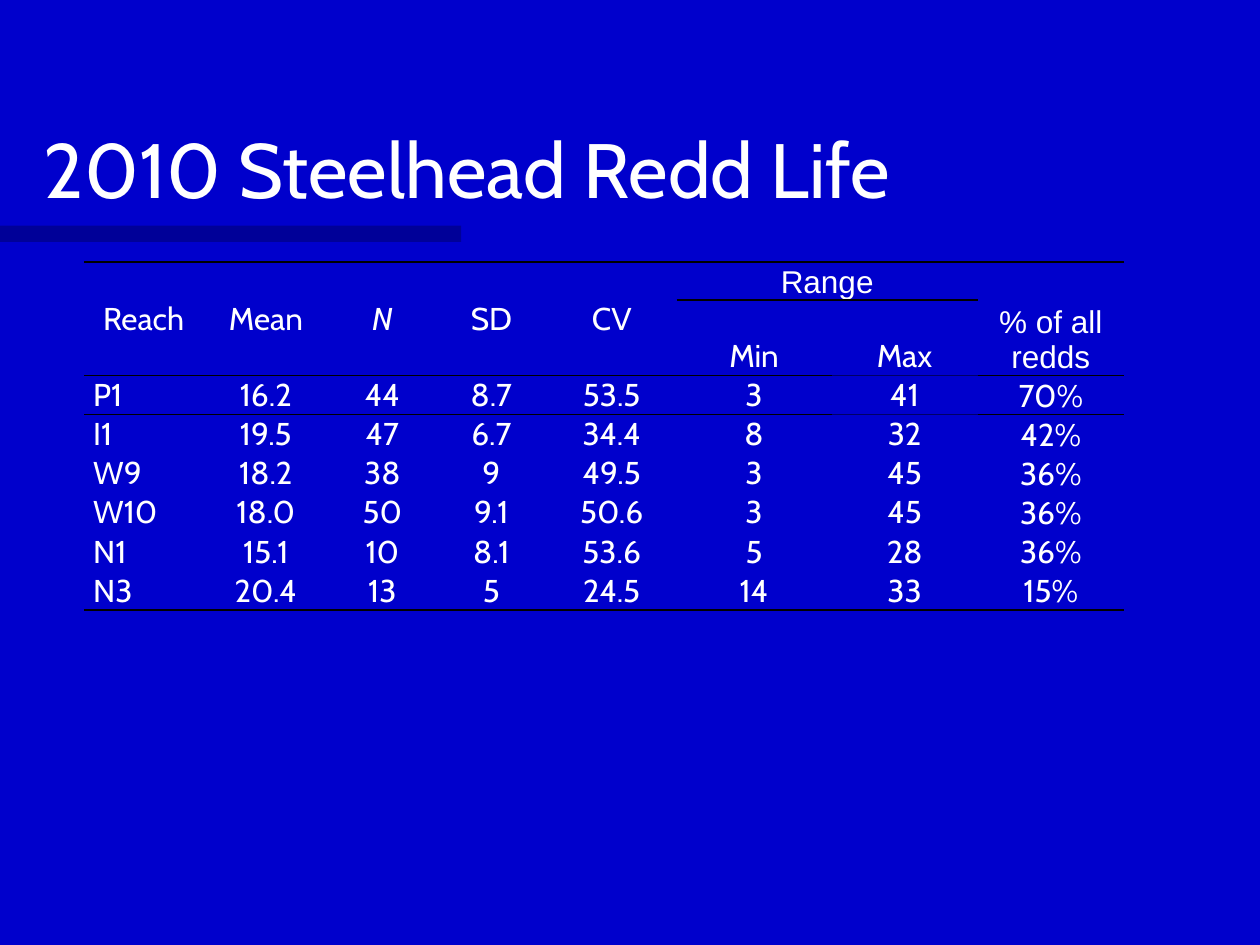
from lxml import etree
from pptx import Presentation
from pptx.dml.color import RGBColor
from pptx.enum.shapes import MSO_SHAPE
from pptx.enum.text import MSO_ANCHOR, PP_ALIGN
from pptx.oxml.ns import qn
from pptx.util import Inches, Pt

BLUE = RGBColor(0x00, 0x00, 0xCC)
NAVY = RGBColor(0x00, 0x00, 0x66)
BLACK = RGBColor(0x00, 0x00, 0x00)
WHITE = RGBColor(0xFF, 0xFF, 0xFF)
RECTANGLE = MSO_SHAPE.RECTANGLE
MIDDLE, BOTTOM = MSO_ANCHOR.MIDDLE, MSO_ANCHOR.BOTTOM
LEFT, CENTER = PP_ALIGN.LEFT, PP_ALIGN.CENTER
NO_STYLE = "{2D5ABB26-0587-4C30-8999-92F81FD0307C}"

TITLE = "2010 Steelhead Redd Life"
ROWS = [
    ["Reach", "Mean", "N", "SD", "CV", "Range", "", "% of all redds"],
    ["", "", "", "", "", "Min", "Max", ""],
    ["P1", "16.2", "44", "8.7", "53.5", "3", "41", "70%"],
    ["I1", "19.5", "47", "6.7", "34.4", "8", "32", "42%"],
    ["W9", "18.2", "38", "9", "49.5", "3", "45", "36%"],
    ["W10", "18.0", "50", "9.1", "50.6", "3", "45", "36%"],
    ["N1", "15.1", "10", "8.1", "53.6", "5", "28", "36%"],
    ["N3", "20.4", "13", "5", "24.5", "14", "33", "15%"],
]
COLUMN_WIDTHS = [0.94, 1, 0.85, 0.88, 1.03, 1.23, 1.16, 1.16]
ROW_HEIGHT = 0.28
HEADER_ROWS = 2
MIN, MAX, PERCENT = 5, 6, 7  # column numbers; "Range" spans MIN and MAX


def style_text(paragraph, size, font_name="Cabin"):
    font = paragraph.font
    for span in paragraph.runs:
        font = span.font
        font.size = Pt(size)
        font.name = font_name
        font.color.rgb = WHITE


def add_border(cell, side, color):
    """Draw a 1 pt line on a side: 'lnT' or 'lnB'. Call before filling the cell."""
    line = etree.SubElement(cell._tc.get_or_add_tcPr(), qn("a:" + side), w=str(Pt(1)))
    fill = etree.SubElement(line, qn("a:solidFill"))
    etree.SubElement(fill, qn("a:srgbClr"), val=str(color))


def add_cell_borders(cell, row, column):
    under_max = NAVY if column == MAX else BLACK
    if row == 0 or (row == 1 and column in (MIN, MAX)):
        add_border(cell, "lnT", BLACK)
    elif row == HEADER_ROWS:
        add_border(cell, "lnT", under_max)
    if row == 1:
        add_border(cell, "lnB", under_max)
    elif row in (0, len(ROWS) - 1):
        add_border(cell, "lnB", BLACK)


def fill_cell(cell, row, column):
    text = ROWS[row][column]
    is_header = row < HEADER_ROWS
    tight = column == PERCENT and not is_header
    cell.margin_left = cell.margin_right = Inches(0.01 if tight else 0.07)
    cell.margin_top = Inches(0.01 if tight else 0)
    cell.margin_bottom = 0
    cell.vertical_anchor = MIDDLE if row == 0 and column < MIN else BOTTOM
    add_cell_borders(cell, row, column)
    cell.fill.background()
    if text:
        cell.text_frame.text = text
        para = cell.text_frame.paragraphs[0]
        para.alignment = LEFT if column == 0 and not is_header else CENTER
        style_text(para, 18, "Arial" if row == 0 and column >= MIN else "Cabin")
        if text == "N":
            para.runs[0].font.italic = True


def add_redd_table(page):
    frame = page.shapes.add_table(
        len(ROWS), len(COLUMN_WIDTHS), Inches(0.67), Inches(2.08),
        Inches(sum(COLUMN_WIDTHS)), Inches(ROW_HEIGHT * len(ROWS)))
    table = frame.table
    table.first_row = table.horz_banding = False
    table._tbl.tblPr.find(qn("a:tableStyleId")).text = NO_STYLE
    for column, width in zip(table.columns, COLUMN_WIDTHS):
        column.width = Inches(width)
    for row in table.rows:
        row.height = Inches(ROW_HEIGHT)
    for column in range(len(COLUMN_WIDTHS)):
        if column not in (MIN, MAX):
            table.cell(0, column).merge(table.cell(1, column))
    table.cell(0, MIN).merge(table.cell(0, MAX))
    for row in range(len(ROWS)):
        for column in range(len(COLUMN_WIDTHS)):
            fill_cell(table.cell(row, column), row, column)


def main():
    deck = Presentation()
    deck.slide_width, deck.slide_height = Inches(10), Inches(7.5)
    page = deck.slides.add_slide(deck.slide_layouts[6])
    page.background.fill.solid()
    page.background.fill.fore_color.rgb = BLUE

    bar = page.shapes.add_shape(RECTANGLE, 0, Inches(1.79), Inches(3.66), Inches(0.13))
    bar.shadow.inherit = False
    bar.line.fill.background()
    bar.fill.solid()
    bar.fill.fore_color.rgb = NAVY
    bar_color = bar._element.spPr.find(qn("a:solidFill")).find(qn("a:srgbClr"))
    etree.SubElement(bar_color, qn("a:alpha"), val="50000")

    title = page.shapes.add_textbox(Inches(0.25), Inches(0.5), Inches(8.5), Inches(1.25))
    title.text_frame.word_wrap = True
    title.text_frame.vertical_anchor = BOTTOM
    title.text_frame.text = TITLE
    style_text(title.text_frame.paragraphs[0], 44)

    add_redd_table(page)
    deck.save("out.pptx")


if __name__ == "__main__":
    main()
